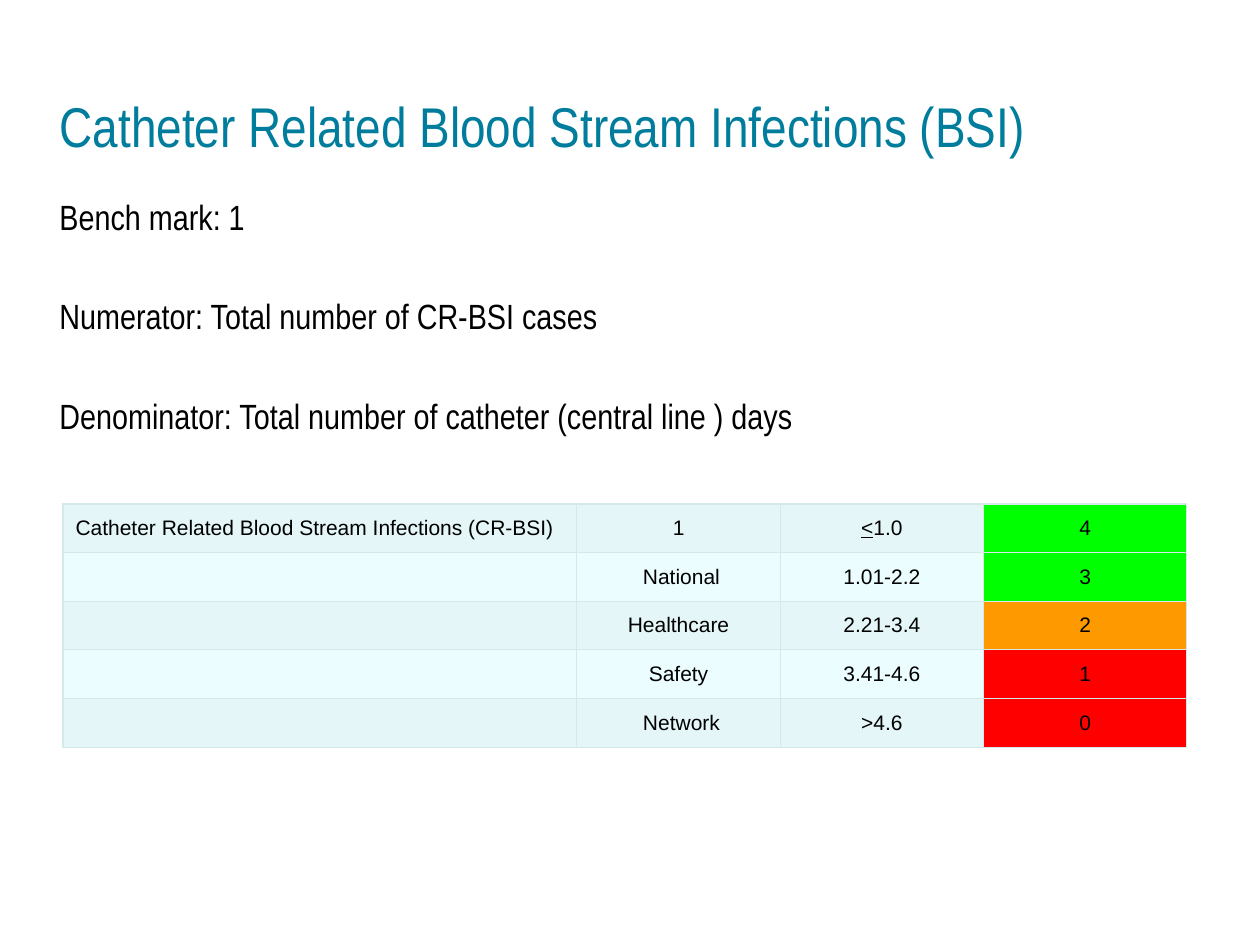
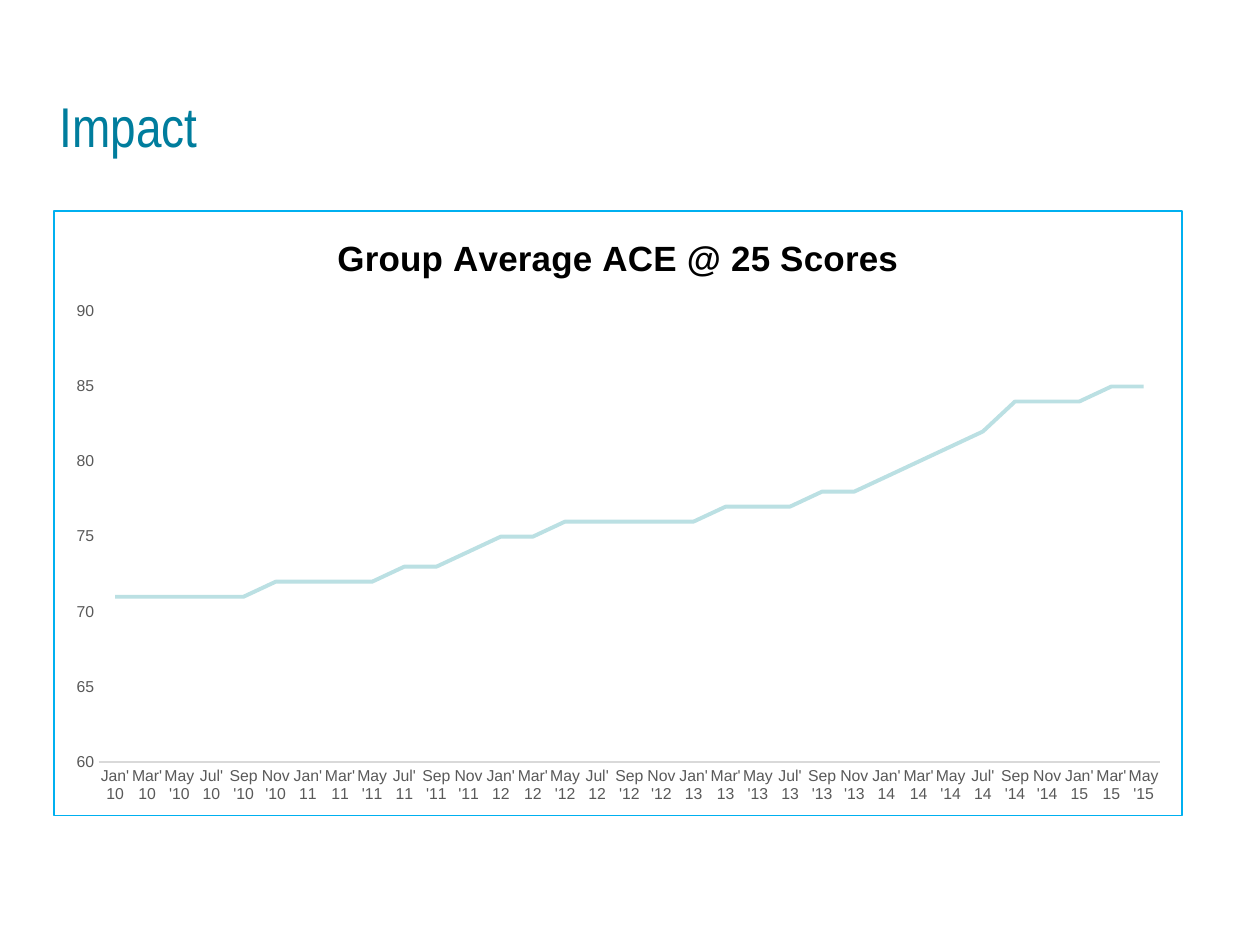
from dataclasses import dataclass
from itertools import islice, product

from lxml import etree
from pptx import Presentation
from pptx import util as u
from pptx.chart.data import CategoryChartData
from pptx.dml.color import RGBColor
from pptx.enum import chart as charts, text
from pptx.oxml import parse_xml
from pptx.oxml.ns import nsdecls, qn

COLORS = {
    "title": "007D9D", "ink": "000000", "axis_text": "595959", "axis_line": "D9D9D9",
    "band_dark": "E4F6F8", "band_light": "EBFDFF", "border": "D5E8EA",
    "green": "00FF00", "orange": "FF9900", "red": "FF0000",
    "score_line": "BBE0E3", "frame": "00B0F0",
}
BODY_FONT, NARROW_FONT = "Arial", "Arial Narrow"

DEFINITIONS = [
    "Bench mark: 1",
    "Numerator: Total number of CR-BSI cases",
    "Denominator: Total number of catheter (central line ) days",
]
MONTHS = ["Jan", "Mar", "May", "Jul", "Sep", "Nov"]
ACE_SCORES = [71, 71, 71, 71, 71, 72, 72, 72, 72, 73, 73, 74, 75, 75, 76, 76, 76,
              76, 76, 77, 77, 77, 78, 78, 79, 80, 81, 82, 84, 84, 84, 85, 85]


@dataclass
class ScoreRow:
    measure: str
    benchmark: str
    rate: str
    score: str
    color: str


SCORE_ROWS = [
    ScoreRow("Catheter Related Blood Stream Infections (CR-BSI)", "1", "<1.0", "4", "green"),
    ScoreRow("", " National", "1.01-2.2", "3", "green"),
    ScoreRow("", " Healthcare ", "2.21-3.4", "2", "orange"),
    ScoreRow("", " Safety ", "3.41-4.6", "1", "red"),
    ScoreRow("", " Network", ">4.6", "0", "red"),
]
COLUMN_WIDTHS = [10.36, 4.1, 4.1, 4.1]
ROW_HEIGHT = 0.98


def rgb(name: str) -> RGBColor:
    return RGBColor.from_string(COLORS[name])


def style_font(font, size: float, color: str = "ink", name: str = BODY_FONT) -> None:
    font.size, font.name = u.Pt(size), name
    font.color.rgb = rgb(color)


def add_page(deck, title: str):
    page = deck.slides.add_slide(deck.slide_layouts[5])
    box = page.shapes.title
    box.left, box.top, box.width, box.height = (u.Cm(n) for n in (0.95, 1.47, 21.06, 1.88))
    frame = box.text_frame
    frame.text = title
    frame.auto_size = text.MSO_AUTO_SIZE.NONE
    frame.vertical_anchor = text.MSO_ANCHOR.BOTTOM
    para = frame.paragraphs[0]
    para.alignment = text.PP_ALIGN.LEFT
    para.line_spacing = 0.9
    style_font(para.runs[0].font, 32, "title", NARROW_FONT)
    return page


def add_definitions(page) -> None:
    box = page.shapes.add_textbox(u.Cm(0.95), u.Cm(3.81), u.Cm(24.13), u.Cm(5.51))
    frame = box.text_frame
    frame.word_wrap = True
    frame.text = "\n".join(DEFINITIONS)
    for index, para in enumerate(frame.paragraphs):
        if index:
            para.space_before = u.Pt(33)
        style_font(para.runs[0].font, 20, name=NARROW_FONT)


def add_cell_borders(cell) -> None:
    properties = cell._tc.get_or_add_tcPr()
    for index, side in enumerate("LRTB"):
        properties.insert(index, parse_xml(
            f'<a:ln{side} {nsdecls("a")} w="{u.Pt(0.75)}"><a:solidFill>'
            f'<a:srgbClr val="{COLORS["border"]}"/></a:solidFill></a:ln{side}>'))


def fill_cell(cell, words: str, color: str, centered: bool) -> None:
    cell.fill.solid()
    cell.fill.fore_color.rgb = rgb(color)
    cell.vertical_anchor = text.MSO_ANCHOR.MIDDLE
    cell.margin_top = cell.margin_bottom = 0
    add_cell_borders(cell)
    para = cell.text_frame.paragraphs[0]
    para.alignment = text.PP_ALIGN.CENTER if centered else text.PP_ALIGN.LEFT
    if words.startswith("<"):
        para.text = "<"
        para.runs[0].font.underline = True
        para.add_run().text = words[1:]
    elif words:
        para.text = words
    for span in para.runs:
        style_font(span.font, 12)


def add_score_table(page) -> None:
    frame = page.shapes.add_table(
        len(SCORE_ROWS), len(COLUMN_WIDTHS), u.Cm(1.27), u.Cm(10.16),
        u.Cm(sum(COLUMN_WIDTHS)), u.Cm(ROW_HEIGHT * len(SCORE_ROWS)))
    table = frame.table
    table.first_row = table.horz_banding = False
    for column, width in zip(table.columns, COLUMN_WIDTHS):
        column.width = u.Cm(width)
    for index, (row, entry) in enumerate(zip(table.rows, SCORE_ROWS)):
        row.height = u.Cm(ROW_HEIGHT)
        band = "band_light" if index % 2 else "band_dark"
        texts = [entry.measure, entry.benchmark, entry.rate, entry.score]
        fills = [band, band, band, entry.color]
        for position, (cell, words, color) in enumerate(zip(row.cells, texts, fills)):
            fill_cell(cell, words, color, centered=position > 0)


def add_chart_frame(chart) -> None:
    """Outline the whole chart area, which has no public line format."""
    outline = parse_xml(
        f'<c:spPr {nsdecls("c", "a")}><a:noFill/><a:ln w="{u.Pt(1)}"><a:solidFill>'
        f'<a:srgbClr val="{COLORS["frame"]}"/></a:solidFill></a:ln></c:spPr>')
    chart._chartSpace.find(qn("c:txPr")).addprevious(outline)
    if chart._chartSpace.find(qn("c:roundedCorners")) is None:
        corners = etree.Element(qn("c:roundedCorners"), val="0")
        chart._chartSpace.find(qn("c:chart")).addprevious(corners)


def style_axis(axis) -> None:
    axis.has_major_gridlines = False
    axis.major_tick_mark = axis.minor_tick_mark = charts.XL_TICK_MARK.NONE
    style_font(axis.tick_labels.font, 9, "axis_text")


def add_score_chart(page) -> None:
    data = CategoryChartData(number_format="0")
    labels = (f"{month}'{year}" for year, month in product(range(10, 16), MONTHS))
    data.categories = list(islice(labels, len(ACE_SCORES)))
    data.add_series("Series 1", ACE_SCORES)
    chart = page.shapes.add_chart(
        charts.XL_CHART_TYPE.LINE, u.Cm(1.07), u.Cm(4.24), u.Cm(22.78), u.Cm(12.22), data).chart
    style_font(chart.font, 10)
    add_chart_frame(chart)
    chart.has_legend = False

    chart.has_title = True
    title = chart.chart_title
    title.include_in_layout = False
    title.text_frame.text = "Group Average ACE @ 25 Scores"
    title_font = title.text_frame.paragraphs[0].runs[0].font
    style_font(title_font, 20)
    title_font.bold = True

    months, scores = chart.category_axis, chart.value_axis
    for axis in (months, scores):
        style_axis(axis)
    months.format.line.color.rgb = rgb("axis_line")
    months.format.line.width = u.Pt(0.75)
    scores.format.line.fill.background()
    scores.minimum_scale, scores.maximum_scale, scores.major_unit = 60, 90, 5

    plot = chart.plots[0]
    plot.vary_by_categories = False
    series = plot.series[0]
    series.smooth = False
    series.format.line.color.rgb = rgb("score_line")
    series.format.line.width = u.Pt(2.25)


def main() -> None:
    deck = Presentation()
    deck.slide_width, deck.slide_height = u.Cm(25.4), u.Cm(19.05)
    infections = add_page(deck, "Catheter Related Blood Stream Infections (BSI)")
    add_definitions(infections)
    add_score_table(infections)
    add_score_chart(add_page(deck, "Impact"))
    deck.save("out.pptx")


if __name__ == "__main__":
    main()
